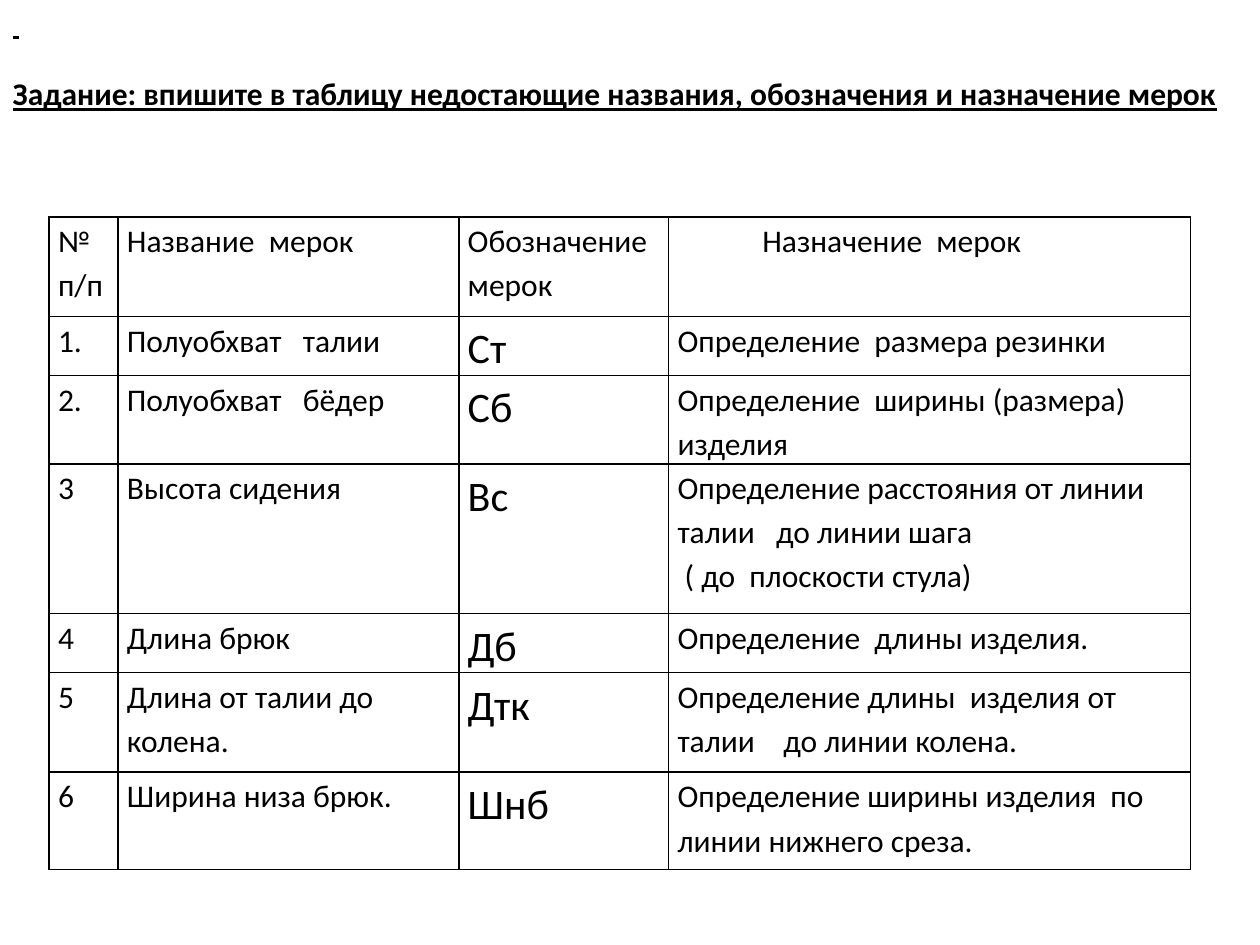
import dataclasses
import typing

import pptx
import pptx.dml.color
import pptx.enum.text
import pptx.oxml
import pptx.oxml.ns
import pptx.util

Cm = pptx.util.Cm
Pt = pptx.util.Pt


@dataclasses.dataclass(frozen=True)
class Theme:
    """Colours, font, type sizes and spacing of the slide."""

    ink: str = "000000"
    font: str = "Calibri"
    small: float = 16
    text: float = 18
    large: float = 24
    lead: float = 1.15
    rule: float = 1


@dataclasses.dataclass(frozen=True)
class Row:
    """One line of the table of measures."""

    high: float
    num: str
    name: str
    sign: str
    aim: str


THEME = Theme()
TASK = "Задание: впишите в таблицу недостающие названия, обозначения и назначение мерок"
COLS = (1.39, 6.87, 4.23, 10.52)
SIDE = 0.18
INDENT = 1.89
ROWS = (
    Row(2.01, "№  п/п", "Название  мерок", "Обозначение мерок", "Назначение  мерок"),
    Row(1.02, "1.", "Полуобхват   талии", "Ст", "Определение  размера резинки"),
    Row(1.02, "2.", "Полуобхват   бёдер", "Сб", "Определение  ширины (размера) изделия"),
    Row(3.02, "3", "Высота сидения", "Вс",
        "Определение расстояния от линии талии   до линии шага\n ( до  плоскости стула)"),
    Row(1.02, "4", "Длина брюк", "Дб", "Определение  длины изделия."),
    Row(2.01, "5", "Длина от талии до колена.", "Дтк",
        "Определение длины  изделия от талии    до линии колена."),
    Row(1.96, "6", "Ширина низа брюк.", "Шнб",
        "Определение ширины изделия  по линии нижнего среза."),
)


def style(part: typing.Any, size: float, bold: bool = False, line: bool = False) -> None:
    """Format the runs of a paragraph."""
    for run in part.runs:
        font = run.font
        font.name, font.size = THEME.font, Pt(size)
        font.bold, font.underline = bold, line
        font.color.rgb = pptx.dml.color.RGBColor.from_string(THEME.ink)


def frame(cell: typing.Any) -> None:
    """Rule all four sides of a cell and leave it unfilled."""
    props = cell._tc.get_or_add_tcPr()
    for side in "LRTB":
        props.append(pptx.oxml.parse_xml(
            f'<a:ln{side} {pptx.oxml.ns.nsdecls("a")} w="{Pt(THEME.rule)}">'
            f'<a:solidFill><a:srgbClr val="{THEME.ink}"/></a:solidFill></a:ln{side}>'
        ))
    cell.fill.background()


def write(cell: typing.Any, text: str, size: float, left: float) -> None:
    """Fill one cell with text."""
    frame(cell)
    cell.margin_left, cell.margin_right = Cm(left), Cm(SIDE)
    cell.margin_top = cell.margin_bottom = 0
    cell.text_frame.text = text
    for part in cell.text_frame.paragraphs:
        part.line_spacing = THEME.lead
        style(part, size)


def head(slide: typing.Any) -> None:
    """Write the task in the title placeholder."""
    title = slide.shapes.title
    title.left, title.top, title.width, title.height = Cm(0), Cm(0), Cm(25), Cm(2.4)
    body = title.text_frame
    body.word_wrap = True
    body.auto_size = pptx.enum.text.MSO_AUTO_SIZE.NONE
    body.vertical_anchor = pptx.enum.text.MSO_ANCHOR.MIDDLE
    body.text = f" \n{TASK}"
    mark, task = body.paragraphs
    style(mark, THEME.small, line=True)
    style(task, THEME.text, bold=True, line=True)
    task.space_before = Pt(19.5)
    for part in body.paragraphs:
        part.alignment = pptx.enum.text.PP_ALIGN.LEFT


def grid(slide: typing.Any) -> None:
    """Draw the table of measures."""
    table = slide.shapes.add_table(
        len(ROWS), len(COLS), Cm(0.99), Cm(4.37),
        Cm(sum(COLS)), Cm(sum(row.high for row in ROWS)),
    ).table
    table.first_row = table.horz_banding = False
    for col, wide in zip(table.columns, COLS):
        col.width = Cm(wide)
    for y, row in enumerate(ROWS):
        table.rows[y].height = Cm(row.high)
        for x, text in enumerate((row.num, row.name, row.sign, row.aim)):
            size = THEME.large if y and x == 2 else THEME.text
            left = INDENT if y == 0 and x == 3 else SIDE
            write(table.cell(y, x), text, size, left)


def main() -> None:
    """Build the slide and save it."""
    deck = pptx.Presentation()
    deck.slide_width, deck.slide_height = Cm(25.4), Cm(19.05)
    slide = deck.slides.add_slide(deck.slide_layouts[5])
    head(slide)
    grid(slide)
    deck.save("out.pptx")


if __name__ == "__main__":
    main()
